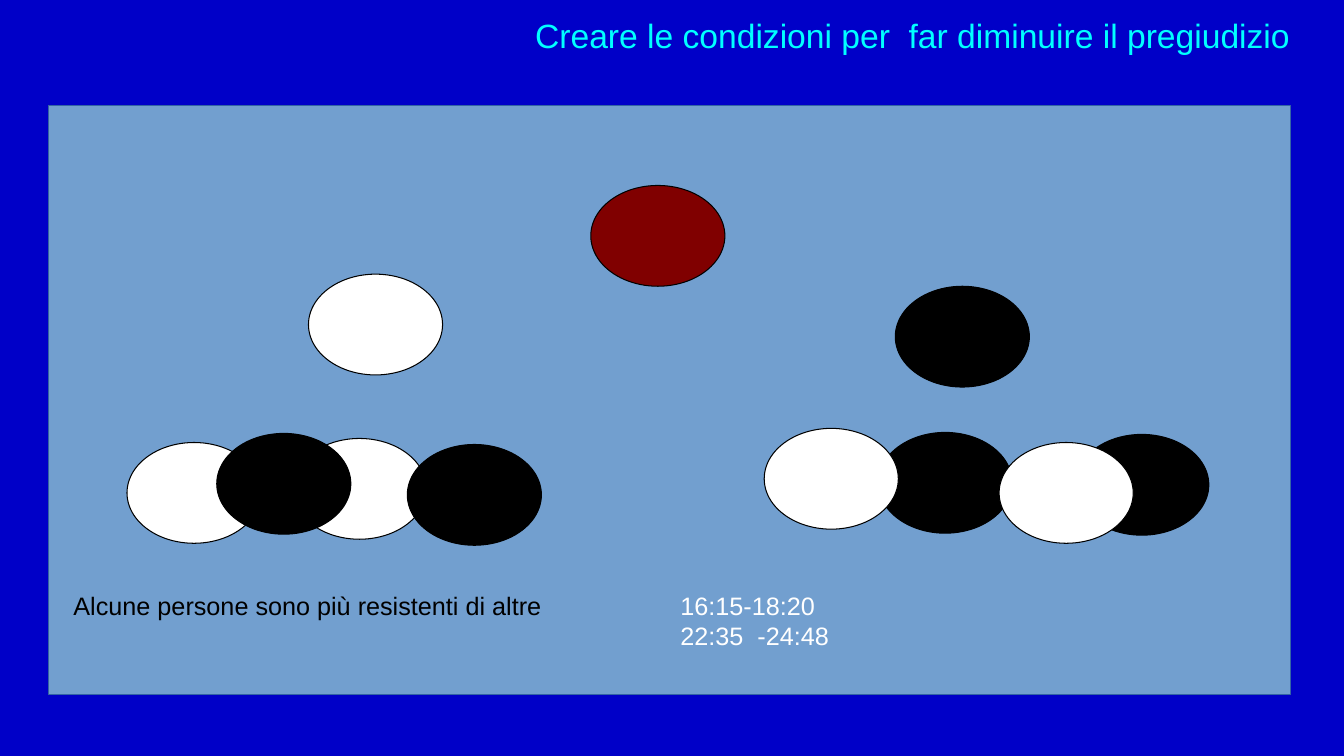
import dataclasses
import typing

import pptx
import pptx.dml.color
import pptx.enum.shapes
import pptx.enum.text
import pptx.slide
import pptx.util

Inches = pptx.util.Inches
Shape = pptx.enum.shapes.MSO_SHAPE
Align = pptx.enum.text.PP_ALIGN
Anchor = pptx.enum.text.MSO_ANCHOR


@dataclasses.dataclass(frozen=True)
class Theme:
    background: str = "0000C8"
    panel: str = "729FCF"
    panel_line: str = "3465A4"
    title: str = "00FFFF"
    white: str = "FFFFFF"
    black: str = "000000"
    red: str = "800000"
    font: str = "Arial"
    title_size: float = 24
    body_size: float = 18
    line_width: float = 0.75


THEME = Theme()


class Box(typing.NamedTuple):
    left: float
    top: float
    width: float
    height: float


class Person(typing.NamedTuple):
    left: float
    top: float
    color: str


class Label(typing.NamedTuple):
    box: Box
    lines: tuple[str, ...]
    color: str
    size: float = THEME.body_size
    align: Align = Align.LEFT
    anchor: Anchor = Anchor.TOP


PANEL = Box(0.48, 1.05, 12.32, 5.84)
PERSON_WIDTH, PERSON_HEIGHT = 1.33, 1
PEOPLE = (
    Person(2.9, 4.35, THEME.white),
    Person(1.26, 4.39, THEME.white),
    Person(3.06, 2.72, THEME.white),
    Person(8.88, 2.84, THEME.black),
    Person(2.15, 4.3, THEME.black),
    Person(8.71, 4.29, THEME.black),
    Person(10.66, 4.31, THEME.black),
    Person(7.58, 4.25, THEME.white),
    Person(5.86, 1.84, THEME.red),
    Person(9.91, 4.39, THEME.white),
    Person(4.04, 4.41, THEME.black),
)
LABELS = (
    Label(Box(1.77, 0, 11.12, 0.7),
          ("Creare le condizioni per  far diminuire il pregiudizio",),
          THEME.title, THEME.title_size, Align.RIGHT, Anchor.MIDDLE),
    Label(Box(0.63, 5.81, 6.09, 0.4),
          ("Alcune persone sono più resistenti di altre",), THEME.black),
    Label(Box(6.65, 5.81, 6.09, 1),
          ("16:15-18:20", "22:35  -24:48"), THEME.white),
)


def rgb(color: str) -> pptx.dml.color.RGBColor:
    return pptx.dml.color.RGBColor.from_string(color)


def add_figure(s: pptx.slide.Slide, kind: Shape, box: Box, fill: str, line: str) -> None:
    sp = s.shapes.add_shape(kind, *map(Inches, box))
    sp.shadow.inherit = False
    sp.fill.solid()
    sp.fill.fore_color.rgb = rgb(fill)
    sp.line.color.rgb = rgb(line)
    sp.line.width = pptx.util.Pt(THEME.line_width)


def add_label(s: pptx.slide.Slide, label: Label) -> None:
    tf = s.shapes.add_textbox(*map(Inches, label.box)).text_frame
    tf.word_wrap = True
    tf.vertical_anchor = label.anchor
    for i, line in enumerate(label.lines):
        p = tf.add_paragraph() if i else tf.paragraphs[0]
        p.alignment = label.align
        r = p.add_run()
        r.text = line
        r.font.name = THEME.font
        r.font.size = pptx.util.Pt(label.size)
        r.font.color.rgb = rgb(label.color)


def main() -> None:
    """Build the slide on creating conditions that reduce prejudice."""
    prs = pptx.Presentation()
    prs.slide_width, prs.slide_height = Inches(13.33), Inches(7.5)
    s = prs.slides.add_slide(prs.slide_layouts[6])
    s.background.fill.solid()
    s.background.fill.fore_color.rgb = rgb(THEME.background)
    add_figure(s, Shape.RECTANGLE, PANEL, THEME.panel, THEME.panel_line)
    for person in PEOPLE:
        box = Box(person.left, person.top, PERSON_WIDTH, PERSON_HEIGHT)
        add_figure(s, Shape.OVAL, box, person.color, THEME.black)
    for label in LABELS:
        add_label(s, label)
    prs.save("out.pptx")


if __name__ == "__main__":
    main()
